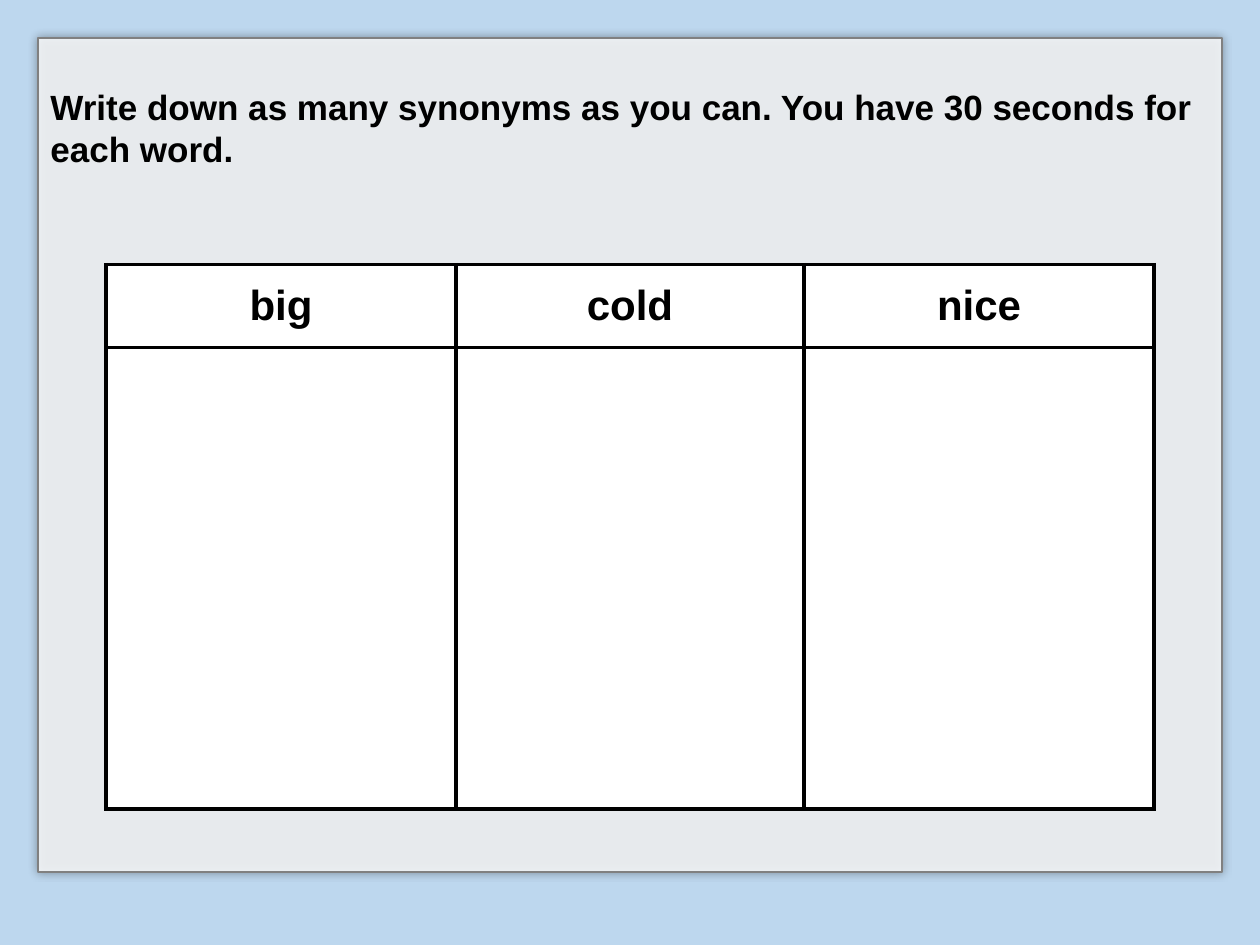
from pptx import Presentation
from pptx.dml.color import RGBColor
from pptx.enum.text import MSO_ANCHOR, MSO_AUTO_SIZE, PP_ALIGN
from pptx.oxml import parse_xml
from pptx.oxml.ns import nsdecls, qn
from pptx.util import Inches, Pt

LEFT, CENTER = PP_ALIGN.LEFT, PP_ALIGN.CENTER
TOP, MIDDLE = MSO_ANCHOR.TOP, MSO_ANCHOR.MIDDLE
NO_AUTOFIT = MSO_AUTO_SIZE.NONE

INSTRUCTION = "Write down as many synonyms as you can. You have 30 seconds for each word."
WORDS = ["big", "cold", "nice"]

THEME = {
    "font": "Arial",
    "instruction_size": 20,
    "word_size": 24,
    "background": "BDD7EE",
    "panel": "FFFFFF",
    "panel_opacity": 82,
    "panel_line": "808080",
    "shadow_opacity": 40,
    "shadow_blur": 5,
    "cell": "FFFFFF",
    "ink": "000000",
    "grid_width": 2.25,
}

PANEL_BOX = (0.3, 0.3, 9.4, 6.62)
GRID_LEFT, GRID_TOP = 0.84, 2.1
COLUMN_WIDTHS = [2.78, 2.76, 2.78]
ROW_HEIGHTS = [0.66, 3.66]


def color(name):
    return RGBColor.from_string(THEME[name])


def style(paragraph, size, alignment):
    paragraph.alignment = alignment
    font = paragraph.font
    font.name, font.size, font.bold = THEME["font"], Pt(THEME[size]), True
    font.color.rgb = color("ink")


def soften(panel):
    properties = panel._element.spPr
    panel_color = properties.find(qn("a:solidFill"))[0]
    panel_color.append(parse_xml(
        f'<a:alpha {nsdecls("a")} val="{THEME["panel_opacity"] * 1000}"/>'))
    properties.append(parse_xml(
        f'<a:effectLst {nsdecls("a")}>'
        f'<a:outerShdw blurRad="{Pt(THEME["shadow_blur"])}" dist="0" dir="0" '
        f'algn="ctr" rotWithShape="0"><a:srgbClr val="{THEME["ink"]}">'
        f'<a:alpha val="{THEME["shadow_opacity"] * 1000}"/></a:srgbClr>'
        f'</a:outerShdw></a:effectLst>'))


def add_borders(cell):
    properties = cell._tc.get_or_add_tcPr()
    for side in ("lnL", "lnR", "lnT", "lnB"):
        properties.append(parse_xml(
            f'<a:{side} {nsdecls("a")} w="{Pt(THEME["grid_width"])}">'
            f'<a:solidFill><a:srgbClr val="{THEME["ink"]}"/></a:solidFill></a:{side}>'))


def build_panel(slide):
    panel = slide.shapes.title
    panel.left, panel.top, panel.width, panel.height = map(Inches, PANEL_BOX)
    panel.fill.solid()
    panel.fill.fore_color.rgb = color("panel")
    panel.line.color.rgb = color("panel_line")
    panel.line.width = Pt(1)
    soften(panel)
    frame = panel.text_frame
    frame.text = INSTRUCTION
    frame.word_wrap = True
    frame.auto_size = NO_AUTOFIT
    frame.vertical_anchor = TOP
    frame.margin_left = frame.margin_right = Inches(0.1)
    frame.margin_top = Inches(0.38)
    style(frame.paragraphs[0], "instruction_size", LEFT)
    frame.paragraphs[0].line_spacing = 1.0


def build_word_grid(slide):
    grid = slide.shapes.add_table(
        len(ROW_HEIGHTS), len(WORDS), Inches(GRID_LEFT), Inches(GRID_TOP),
        Inches(sum(COLUMN_WIDTHS)), Inches(sum(ROW_HEIGHTS))).table
    for column, width in zip(grid.columns, COLUMN_WIDTHS):
        column.width = Inches(width)
    for row, height in zip(grid.rows, ROW_HEIGHTS):
        row.height = Inches(height)
    for cell in grid.iter_cells():
        add_borders(cell)
        cell.fill.solid()
        cell.fill.fore_color.rgb = color("cell")
    for index, word in enumerate(WORDS):
        heading = grid.cell(0, index)
        heading.text = word
        heading.vertical_anchor = MIDDLE
        heading.margin_left = heading.margin_right = 0
        heading.margin_top = heading.margin_bottom = 0
        style(heading.text_frame.paragraphs[0], "word_size", CENTER)


def main():
    presentation = Presentation()
    presentation.slide_width, presentation.slide_height = Inches(10), Inches(7.5)
    slide = presentation.slides.add_slide(presentation.slide_layouts[5])
    slide.background.fill.solid()
    slide.background.fill.fore_color.rgb = color("background")
    build_panel(slide)
    build_word_grid(slide)
    presentation.save("out.pptx")


if __name__ == "__main__":
    main()
